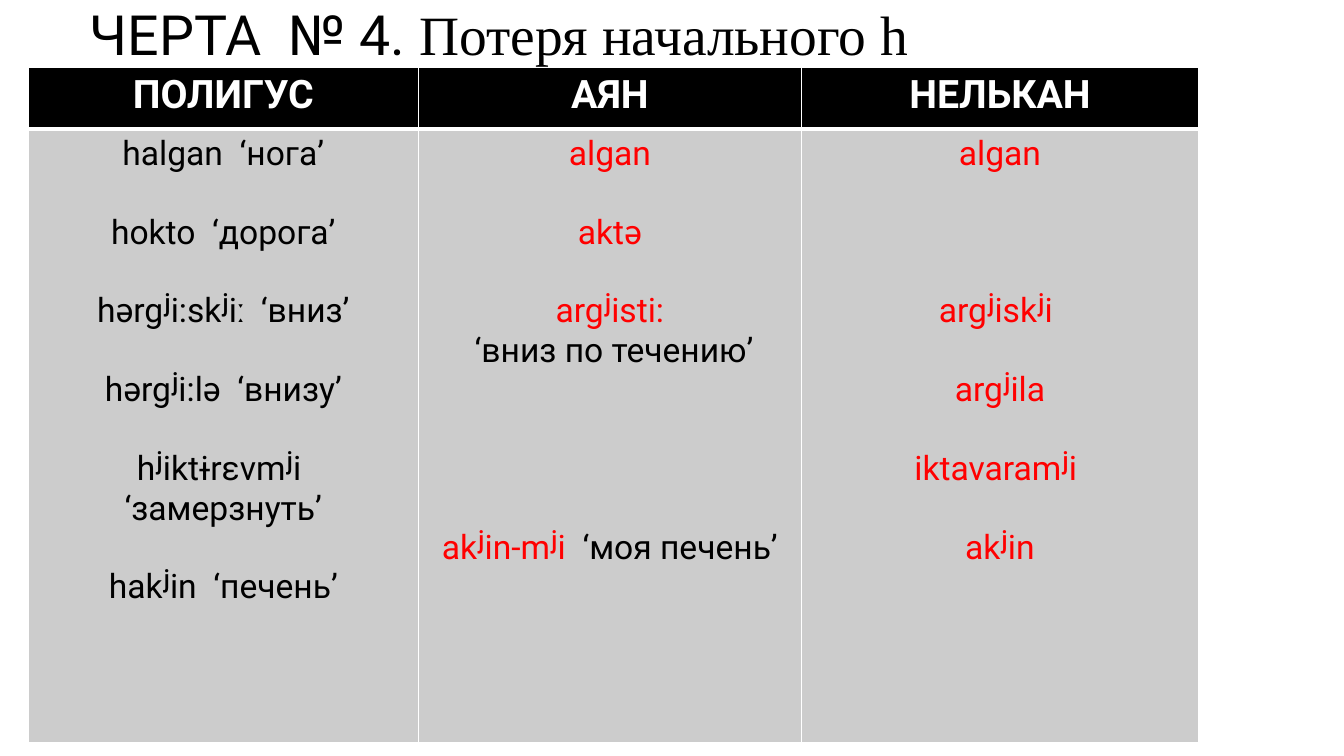
from lxml.etree import SubElement
from pptx import Presentation
from pptx.dml.color import RGBColor
from pptx.enum.text import MSO_ANCHOR, MSO_AUTO_SIZE, PP_ALIGN
from pptx.oxml.ns import qn
from pptx.util import Inches, Pt

BLACK = RGBColor(0x00, 0x00, 0x00)
WHITE = RGBColor(0xFF, 0xFF, 0xFF)
GRAY = RGBColor(0xCC, 0xCC, 0xCC)
RED = RGBColor(0xFF, 0x00, 0x00)

HEADINGS = ["ПОЛИГУС", "АЯН", "НЕЛЬКАН"]
COLUMN_WIDTHS = [29.03, 28.5, 29.55]
ROW_HEIGHTS = [8.13, 81.2]

POLIGUS = [
    (0, [("halgan  ‘нога’", BLACK)]),
    (1, [("hokto  ‘дорога’", BLACK)]),
    (1, [("hərgʲi:skʲiː  ‘вниз’", BLACK)]),
    (1, [("hərgʲi:lə  ‘внизу’", BLACK)]),
    (1, [("hʲiktɨrɛvmʲi  ‘замерзнуть’", BLACK)]),
    (1, [("hakʲin  ‘печень’", BLACK)]),
]
AYAN = [
    (0, [("algan", RED)]),
    (1, [(" aktə ", RED)]),
    (1, [("argʲisti:", RED)]),
    (0, [(" ‘вниз по течению’", BLACK)]),
    (4, [("akʲin-mʲi  ", RED), ("‘моя печень’", BLACK)]),
]
NELKAN = [
    (0, [("algan", RED)]),
    (3, [("argʲiskʲi ", RED)]),
    (1, [(" argʲila ", RED)]),
    (1, [("iktavaramʲi ", RED)]),
    (1, [(" akʲin ", RED)]),
]


def write(para, text, font="Roboto", size=24, color=BLACK, bold=False):
    span = para.add_run()
    span.text = text
    span.font.name = font
    span.font.size = Pt(size)
    span.font.color.rgb = color
    span.font.bold = bold


class WordSlide:
    grid = 100
    line_pitch = 28.13

    def __init__(self, deck):
        self.deck = deck
        self.page = deck.slides.add_slide(deck.slide_layouts[5])

    def across(self, columns):
        return int(self.deck.slide_width * columns / self.grid)

    def down(self, rows):
        return int(self.deck.slide_height * rows / self.grid)

    def title(self, left, top, width, height, spans):
        box = self.page.shapes.title
        box.left, box.top = self.across(left), self.down(top)
        box.width, box.height = self.across(width), self.down(height)
        frame = box.text_frame
        frame.word_wrap = True
        frame.auto_size = MSO_AUTO_SIZE.NONE
        frame.vertical_anchor = MSO_ANCHOR.MIDDLE
        frame.margin_bottom = self.down(8.6)
        para = frame.paragraphs[0]
        para.alignment = PP_ALIGN.LEFT
        para.line_spacing = 0.9
        for text, font in spans:
            write(para, text, font=font, size=39.6)

    def table(self, left, top, widths, heights):
        table = self.page.shapes.add_table(
            len(heights), len(widths), self.across(left), self.down(top),
            self.across(sum(widths)), self.down(sum(heights))).table
        for column, width in zip(table.columns, widths):
            column.width = self.across(width)
        for row, height in zip(table.rows, heights):
            row.height = self.down(height)
        return table

    def cell(self, cell, fill, lines, borders, **style):
        properties = cell._tc.get_or_add_tcPr()
        for side, width in zip("LRTB", borders):
            line = SubElement(properties, qn(f"a:ln{side}"), w=str(Pt(width)))
            paint = SubElement(line, qn("a:solidFill"))
            SubElement(paint, qn("a:srgbClr"), val=str(WHITE))
        cell.fill.solid()
        cell.fill.fore_color.rgb = fill
        frame = cell.text_frame
        for index, (gap, spans) in enumerate(lines):
            para = frame.add_paragraph() if index else frame.paragraphs[0]
            para.alignment = PP_ALIGN.CENTER
            para.space_before = Pt(gap * self.line_pitch)
            for text, color in spans:
                write(para, text, color=color, **style)


def main():
    deck = Presentation()
    deck.slide_width, deck.slide_height = Inches(13.33), Inches(7.5)
    slide = WordSlide(deck)
    slide.title(5.93, 0, 87.17, 17.87, [
        ("ЧЕРТА  № 4. ", "Roboto"),
        ("Потеря начального h", "Times New Roman"),
    ])
    table = slide.table(2.1, 8.93, COLUMN_WIDTHS, ROW_HEIGHTS)
    for index, (heading, words) in enumerate(zip(HEADINGS, [POLIGUS, AYAN, NELKAN])):
        slide.cell(table.cell(0, index), BLACK, [(0, [(heading, WHITE)])],
                   (1, 1, 1, 3), size=28, bold=True)
        slide.cell(table.cell(1, index), GRAY, words, (1, 1, 3, 1))
    deck.save("out.pptx")


if __name__ == "__main__":
    main()
